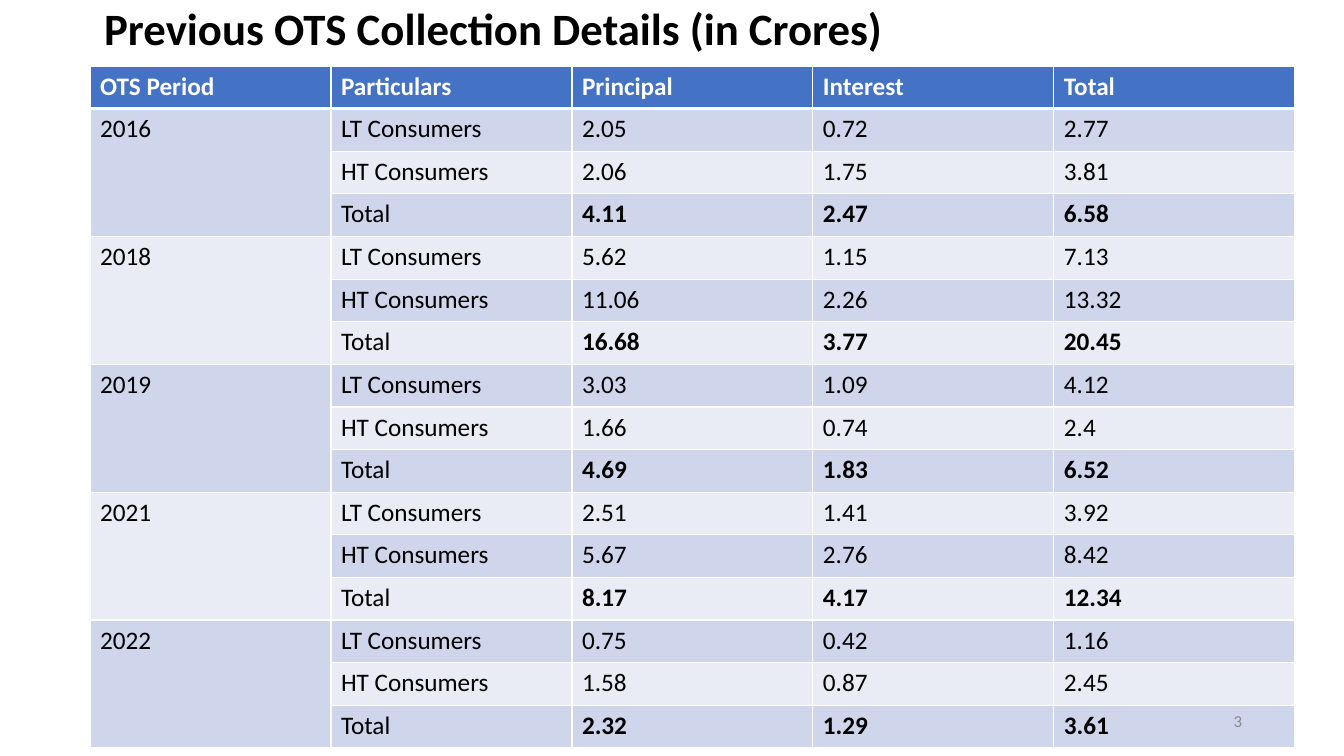
from dataclasses import dataclass

import pptx
import pptx.dml.color
import pptx.enum.text
import pptx.oxml
import pptx.oxml.ns
import pptx.util

EMU_PER_PX = 914400 / 100.8
FONT = "Calibri"
BLACK, WHITE, GREY = "000000", "FFFFFF", "8C8C8C"
HEADER_FILL = "4472C4"
BAND_FILLS = ("E9EBF5", "CFD5EA")
ALIGN = pptx.enum.text.PP_ALIGN
MIDDLE = pptx.enum.text.MSO_ANCHOR.MIDDLE

HEADERS = ("OTS Period", "Particulars", "Principal", "Interest", "Total")
PARTICULARS = ("LT Consumers", "HT Consumers", "Total")
COL_WIDTH, TABLE_HEIGHT = 241, 682


@dataclass
class Period:
    """Principal, interest and total for each of the particulars."""
    year: str
    amounts: tuple[tuple[str, str, str], ...]


PERIODS = (
    Period("2016", (("2.05", "0.72", "2.77"), ("2.06", "1.75", "3.81"), ("4.11", "2.47", "6.58"))),
    Period("2018", (("5.62", "1.15", "7.13"), ("11.06", "2.26", "13.32"), ("16.68", "3.77", "20.45"))),
    Period("2019", (("3.03", "1.09", "4.12"), ("1.66", "0.74", "2.4"), ("4.69", "1.83", "6.52"))),
    Period("2021", (("2.51", "1.41", "3.92"), ("5.67", "2.76", "8.42"), ("8.17", "4.17", "12.34"))),
    Period("2022", (("0.75", "0.42", "1.16"), ("1.58", "0.87", "2.45"), ("2.32", "1.29", "3.61"))),
)


def px(n: int) -> pptx.util.Emu:
    return pptx.util.Emu(round(n * EMU_PER_PX))


def rgb(color: str) -> pptx.dml.color.RGBColor:
    return pptx.dml.color.RGBColor.from_string(color)


def write(tf, text: str, *, size: int = 18, color: str = BLACK, bold: bool = False,
          align=ALIGN.LEFT, spacing: float = 1.0) -> None:
    p = tf.paragraphs[0]
    p.alignment = align
    p.line_spacing = spacing
    r = p.add_run()
    r.text = text
    r.font.name = FONT
    r.font.size = pptx.util.Pt(size)
    r.font.bold = bold
    r.font.color.rgb = rgb(color)


def set_borders(cell, top: int = 1, bottom: int = 1) -> None:
    """Draw white cell borders, with widths in points."""
    ns = pptx.oxml.ns.nsdecls("a")
    tc_pr = cell._tc.get_or_add_tcPr()
    for side, width in (("L", 1), ("R", 1), ("T", top), ("B", bottom)):
        tc_pr.append(pptx.oxml.parse_xml(
            f'<a:ln{side} {ns} w="{pptx.util.Pt(width)}"><a:solidFill>'
            f'<a:srgbClr val="{WHITE}"/></a:solidFill></a:ln{side}>'))


def add_collection_table(s) -> None:
    n_rows = 1 + len(PERIODS) * len(PARTICULARS)
    table = s.shapes.add_table(n_rows, len(HEADERS), px(90), px(66),
                               px(COL_WIDTH * len(HEADERS)), px(TABLE_HEIGHT)).table
    for column in table.columns:
        column.width = px(COL_WIDTH)
    for i, row in enumerate(table.rows):
        row.height = px(TABLE_HEIGHT) // n_rows
        for cell in row.cells:
            set_borders(cell, top=3 if i == 1 else 1, bottom=3 if i == 0 else 1)
            cell.fill.solid()
            cell.fill.fore_color.rgb = rgb(BAND_FILLS[i % 2] if i else HEADER_FILL)

    for col, header in enumerate(HEADERS):
        write(table.cell(0, col).text_frame, header, color=WHITE, bold=True)
    for i, period in enumerate(PERIODS):
        first = 1 + i * len(PARTICULARS)
        year = table.cell(first, 0)
        year.merge(table.cell(first + len(PARTICULARS) - 1, 0))
        write(year.text_frame, period.year)
        for row, (particular, amounts) in enumerate(zip(PARTICULARS, period.amounts), first):
            write(table.cell(row, 1).text_frame, particular)
            for col, amount in enumerate(amounts, 2):
                write(table.cell(row, col).text_frame, amount, bold=particular == "Total")


def main() -> None:
    prs = pptx.Presentation()
    prs.slide_width, prs.slide_height = px(1344), px(756)
    s = prs.slides.add_slide(prs.slide_layouts[5])

    title = s.shapes.title
    title.left, title.top, title.width, title.height = px(94), px(0), px(1159), px(62)
    title.text_frame.vertical_anchor = MIDDLE
    write(title.text_frame, "Previous OTS Collection Details (in Crores)",
          size=32, bold=True, spacing=0.9)

    add_collection_table(s)

    number = s.shapes.add_textbox(px(950), px(701), px(302), px(40))
    number.text_frame.word_wrap = True
    number.text_frame.vertical_anchor = MIDDLE
    write(number.text_frame, "3", size=12, color=GREY, align=ALIGN.RIGHT)

    prs.save("out.pptx")


if __name__ == "__main__":
    main()
